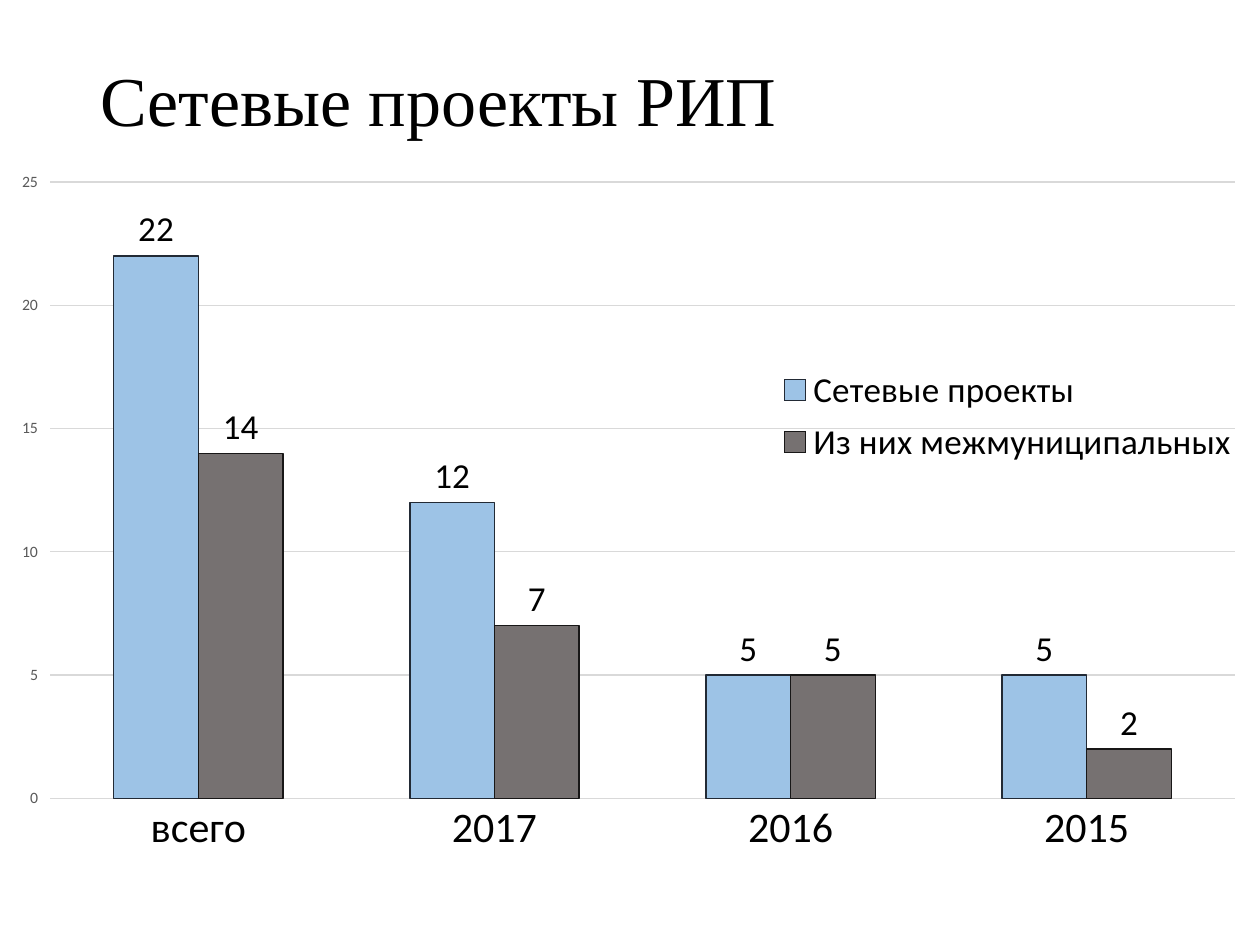
from dataclasses import dataclass

from pptx import Presentation, util as u
from pptx.chart.data import CategoryChartData
from pptx.dml.color import RGBColor
from pptx.enum import chart as ch, text
from pptx.oxml import parse_xml
from pptx.oxml.ns import nsdecls, qn


@dataclass(frozen=True)
class Theme:
    heading: str = "Times New Roman"
    body: str = "Calibri"
    ink: str = "000000"
    muted: str = "595959"
    rule: str = "D9D9D9"
    fills: tuple = ("9DC3E6", "767171")
    outlines: tuple = ("222A35", "181717")
    title_size: int = 40
    category_size: int = 24
    label_size: int = 20
    chart_size: int = 10
    scale_size: int = 9
    line_width: float = 0.75


class Deck:
    def __init__(self, theme, width=10, height=7.5):
        self.theme = theme
        self.prs = Presentation()
        self.prs.slide_width = u.Inches(width)
        self.prs.slide_height = u.Inches(height)
        self.s = self.prs.slides.add_slide(self.prs.slide_layouts[6])

    def box(self, x, y, w, h):
        """Turn shares of the slide's size into lengths."""
        width, height = self.prs.slide_width, self.prs.slide_height
        return [round(v) for v in (x * width, y * height, w * width, h * height)]

    def style_font(self, font, size, color=None, name=None):
        font.size = u.Pt(size)
        font.name = name or self.theme.body
        font.color.rgb = RGBColor.from_string(color or self.theme.ink)

    def style_line(self, line, color):
        line.color.rgb = RGBColor.from_string(color)
        line.width = u.Pt(self.theme.line_width)

    def title(self, words, *area):
        tf = self.s.shapes.add_textbox(*self.box(*area)).text_frame
        tf.word_wrap = True
        tf.vertical_anchor = text.MSO_ANCHOR.MIDDLE
        p = tf.paragraphs[0]
        p.text = words
        p.line_spacing = 0.9
        self.style_font(p.font, self.theme.title_size, name=self.theme.heading)

    def column_chart(self, categories, series, *area):
        data = CategoryChartData()
        data.categories = categories
        for name, values in series.items():
            data.add_series(name, values)
        chart = self.s.shapes.add_chart(
            ch.XL_CHART_TYPE.COLUMN_CLUSTERED, *self.box(*area), data).chart
        chart.has_title = False
        self.style_font(chart.font, self.theme.chart_size)
        self.columns(chart.plots[0])
        self.axes(chart)
        return chart

    def columns(self, plot):
        t = self.theme
        plot.gap_width = 150
        plot.overlap = 0
        plot.vary_by_categories = False
        for series, fill, outline in zip(plot.series, t.fills, t.outlines):
            series.format.fill.solid()
            series.format.fill.fore_color.rgb = RGBColor.from_string(fill)
            self.style_line(series.format.line, outline)
            labels = series.data_labels
            labels.show_value = True
            labels.position = ch.XL_LABEL_POSITION.OUTSIDE_END
            self.style_font(labels.font, t.label_size)

    def axes(self, chart):
        t = self.theme
        categories, values = chart.category_axis, chart.value_axis
        categories.major_tick_mark = ch.XL_TICK_MARK.NONE
        self.style_font(categories.tick_labels.font, t.category_size)
        self.style_line(categories.format.line, t.rule)
        values.minimum_scale, values.maximum_scale, values.major_unit = 0, 25, 5
        values.major_tick_mark = ch.XL_TICK_MARK.OUTSIDE
        self.style_font(values.tick_labels.font, t.scale_size, t.muted)
        values.format.line.fill.background()
        self.style_line(values.major_gridlines.format.line, t.rule)

    def legend(self, chart, *area):
        chart.has_legend = True
        legend = chart.legend
        legend.position = ch.XL_LEGEND_POSITION.RIGHT
        legend.include_in_layout = True
        self.style_font(legend.font, self.theme.label_size)
        element = chart._chartSpace.find(".//" + qn("c:legend"))
        self.place(element, 1, "", *area)

    def plot_area(self, chart, *area):
        element = chart._chartSpace.find(".//" + qn("c:plotArea"))
        self.place(element, 0, '<c:layoutTarget val="inner"/>', *area)

    @staticmethod
    def place(element, index, target, *area):
        """Give a chart part a manual layout, in shares of the chart's size."""
        for old in element.findall(qn("c:layout")):
            element.remove(old)
        modes = "".join(f'<c:{k}Mode val="edge"/>' for k in "xy")
        sizes = "".join(f'<c:{k} val="{v}"/>' for k, v in zip("xywh", area))
        element.insert(index, parse_xml(
            f'<c:layout {nsdecls("c")}><c:manualLayout>{target}{modes}{sizes}'
            "</c:manualLayout></c:layout>"))


def main():
    deck = Deck(Theme())
    deck.title("Сетевые проекты РИП", 0.07, 0.05, 0.86, 0.12)
    chart = deck.column_chart(
        ["всего", "2017", "2016", "2015"],
        {"Сетевые проекты": (22, 12, 5, 5),
         "Из них межмуниципальных": (14, 7, 5, 2)},
        0, 0.17, 1, 0.75)
    deck.plot_area(chart, 0.04, 0.03, 0.94, 0.87)
    deck.legend(chart, 0.61, 0.28, 0.38, 0.16)
    deck.prs.save("out.pptx")


if __name__ == "__main__":
    main()
